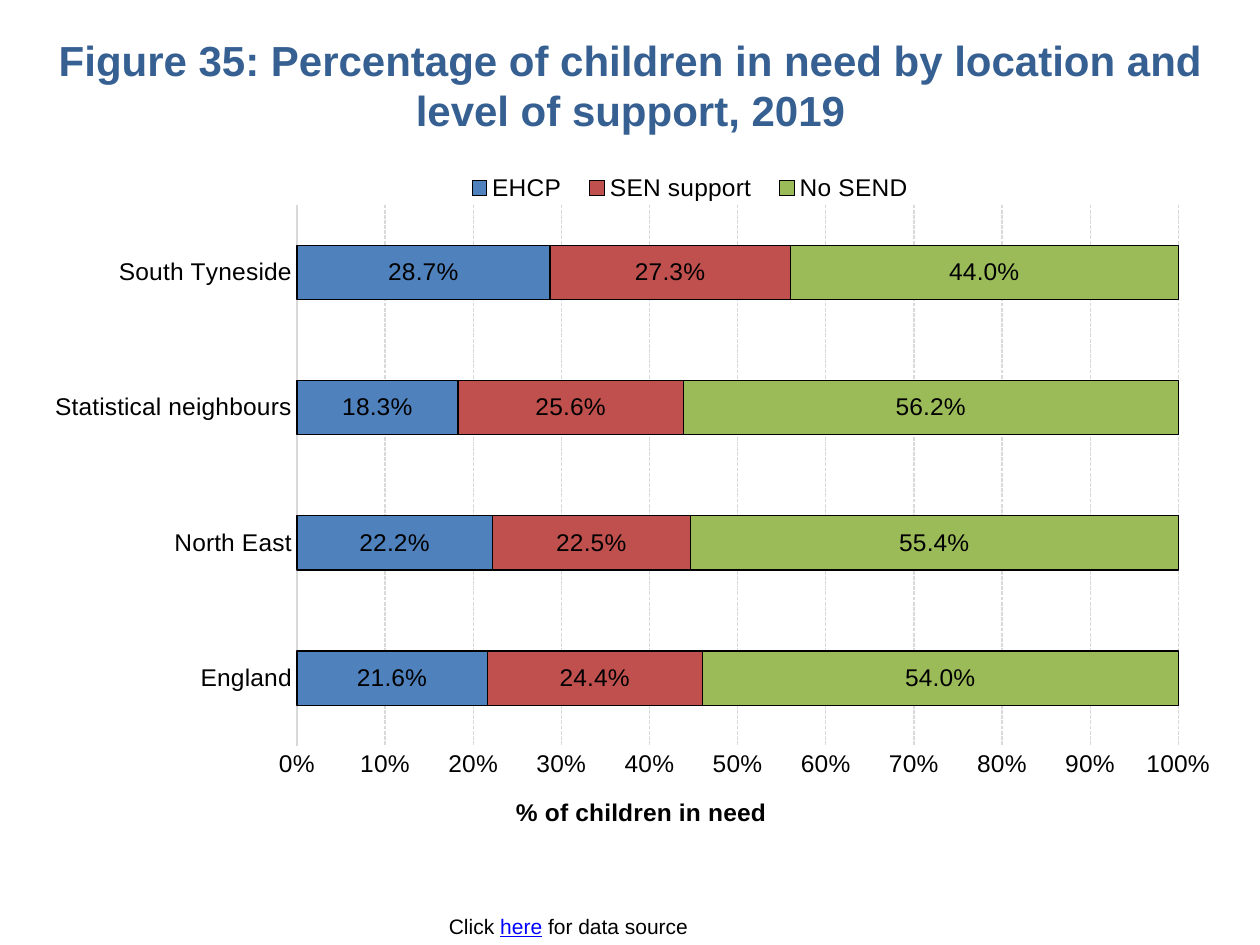
from lxml import etree
from pptx import Presentation
from pptx.chart.data import CategoryChartData
from pptx.dml.color import RGBColor
from pptx.enum.chart import XL_CHART_TYPE, XL_LABEL_POSITION, XL_LEGEND_POSITION, XL_TICK_MARK
from pptx.enum.dml import MSO_LINE
from pptx.enum.text import MSO_ANCHOR, MSO_AUTO_SIZE, PP_ALIGN
from pptx.oxml.ns import qn
from pptx.util import Emu, Pt

# Content
TITLE = "Figure 35: Percentage of children in need by location and level of support, 2019"
AXIS_TITLE = "% of children in need"
SOURCE_NOTE = [("Click ", "000000", False), ("here", "0000FF", True),
               (" for data source", "000000", False)]
LOCATIONS = ["England", "North East", "Statistical neighbours", "South Tyneside"]
SUPPORT_LEVELS = [
    ("EHCP", "4F81BD", [0.216, 0.222, 0.183, 0.287]),
    ("SEN support", "C0504D", [0.244, 0.225, 0.256, 0.273]),
    ("No SEND", "9BBB59", [0.54, 0.554, 0.562, 0.44]),
]

# Places in px: left, top, width, height
SLIDE_SIZE = (1260, 945)
TITLE_BOX = (35, 32, 1191, 106)
CHART_BOX = (35, 165, 1191, 669)
NOTE_BOX = (433, 907, 271, 38)

# Places inside the chart, as shares of its size
PLOT_LAYOUT = {"layoutTarget": "inner", "xMode": "edge", "yMode": "edge",
               "x": 0.22, "y": 0.06, "w": 0.74, "h": 0.82}
LEGEND_LAYOUT = {"xMode": "edge", "yMode": "edge", "x": 0.35, "y": 0.01, "w": 0.4, "h": 0.05}
AXIS_TITLE_LAYOUT = {"xMode": "edge", "yMode": "edge", "x": 0.4, "y": 0.95}


def px(length):
    return Emu(length * 914400 // 126)


def rgb(hex_colour):
    return RGBColor.from_string(hex_colour)


def apply(target, values):
    for name, value in values.items():
        setattr(target, name, value)


def style_font(font, size, colour="000000", **values):
    apply(font, {"name": "Arial", "size": Pt(size), **values})
    font.color.rgb = rgb(colour)


def style_line(line, colour):
    line.color.rgb = rgb(colour)
    line.width = Pt(0.75)


def set_layout(parent, index, values):
    for old_layout in parent.findall(qn("c:layout")):
        parent.remove(old_layout)
    layout = etree.Element(qn("c:layout"))
    manual = etree.SubElement(layout, qn("c:manualLayout"))
    for name, value in values.items():
        etree.SubElement(manual, qn("c:" + name)).set("val", str(value))
    parent.insert(index, layout)


def add_title(slide):
    title = slide.shapes.title
    apply(title, dict(zip(("left", "top", "width", "height"), map(px, TITLE_BOX))))
    frame = title.text_frame
    apply(frame, {"text": TITLE, "word_wrap": True, "auto_size": MSO_AUTO_SIZE.NONE,
                  "vertical_anchor": MSO_ANCHOR.MIDDLE})
    heading = frame.paragraphs[0]
    heading.alignment = PP_ALIGN.CENTER
    style_font(heading.runs[0].font, 24, "376092", bold=True)


def add_support_chart(slide):
    data = CategoryChartData(number_format="0.0%")
    data.categories = LOCATIONS
    for level, _, shares in SUPPORT_LEVELS:
        data.add_series(level, shares)
    chart = slide.shapes.add_chart(
        XL_CHART_TYPE.BAR_STACKED_100, *map(px, CHART_BOX), data).chart
    apply(chart, {"has_title": False, "has_legend": True})
    style_font(chart.font, 10)

    # Bars and their labels
    plot = chart.plots[0]
    apply(plot, {"gap_width": 150, "overlap": 100, "vary_by_categories": False})
    for bars, (_, colour, _) in zip(plot.series, SUPPORT_LEVELS):
        bars.format.fill.solid()
        bars.format.fill.fore_color.rgb = rgb(colour)
        style_line(bars.format.line, "000000")
        labels = bars.data_labels
        apply(labels, {"show_value": True, "position": XL_LABEL_POSITION.CENTER,
                       "number_format": "0.0%", "number_format_is_linked": False})
        style_font(labels.font, 14)

    # Axes
    locations, shares = chart.category_axis, chart.value_axis
    for axis in (locations, shares):
        apply(axis, {"major_tick_mark": XL_TICK_MARK.NONE, "minor_tick_mark": XL_TICK_MARK.NONE})
        style_font(axis.tick_labels.font, 14)
    style_line(locations.format.line, "D9D9D9")
    apply(shares, {"minimum_scale": 0, "maximum_scale": 1, "major_unit": 0.1,
                   "has_major_gridlines": True})
    apply(shares.tick_labels, {"number_format": "0%", "number_format_is_linked": False})
    shares.format.line.fill.background()
    gridlines = shares.major_gridlines.format.line
    style_line(gridlines, "D9D9D9")
    gridlines.dash_style = MSO_LINE.SQUARE_DOT
    axis_title = shares.axis_title
    axis_title.text_frame.text = AXIS_TITLE
    style_font(axis_title.text_frame.paragraphs[0].runs[0].font, 14, bold=True)

    # Legend and inner places
    legend = chart.legend
    apply(legend, {"position": XL_LEGEND_POSITION.TOP, "include_in_layout": False})
    style_font(legend.font, 14)
    plot_area = chart.element.find(".//" + qn("c:plotArea"))
    set_layout(plot_area, 0, PLOT_LAYOUT)
    set_layout(plot_area.find(qn("c:valAx")).find(qn("c:title")), 1, AXIS_TITLE_LAYOUT)
    set_layout(chart.element.find(".//" + qn("c:legend")), 1, LEGEND_LAYOUT)


def add_source_note(slide):
    frame = slide.shapes.add_textbox(*map(px, NOTE_BOX)).text_frame
    apply(frame, {"word_wrap": True, "auto_size": MSO_AUTO_SIZE.SHAPE_TO_FIT_TEXT,
                  "vertical_anchor": MSO_ANCHOR.MIDDLE})
    note = frame.paragraphs[0]
    note.alignment = PP_ALIGN.CENTER
    for words, colour, underline in SOURCE_NOTE:
        run = note.add_run()
        run.text = words
        style_font(run.font, 12, colour, underline=underline)


def main():
    deck = Presentation()
    deck.slide_width, deck.slide_height = map(px, SLIDE_SIZE)
    slide = deck.slides.add_slide(deck.slide_layouts[5])
    add_title(slide)
    add_source_note(slide)
    add_support_chart(slide)
    deck.save("out.pptx")


if __name__ == "__main__":
    main()
